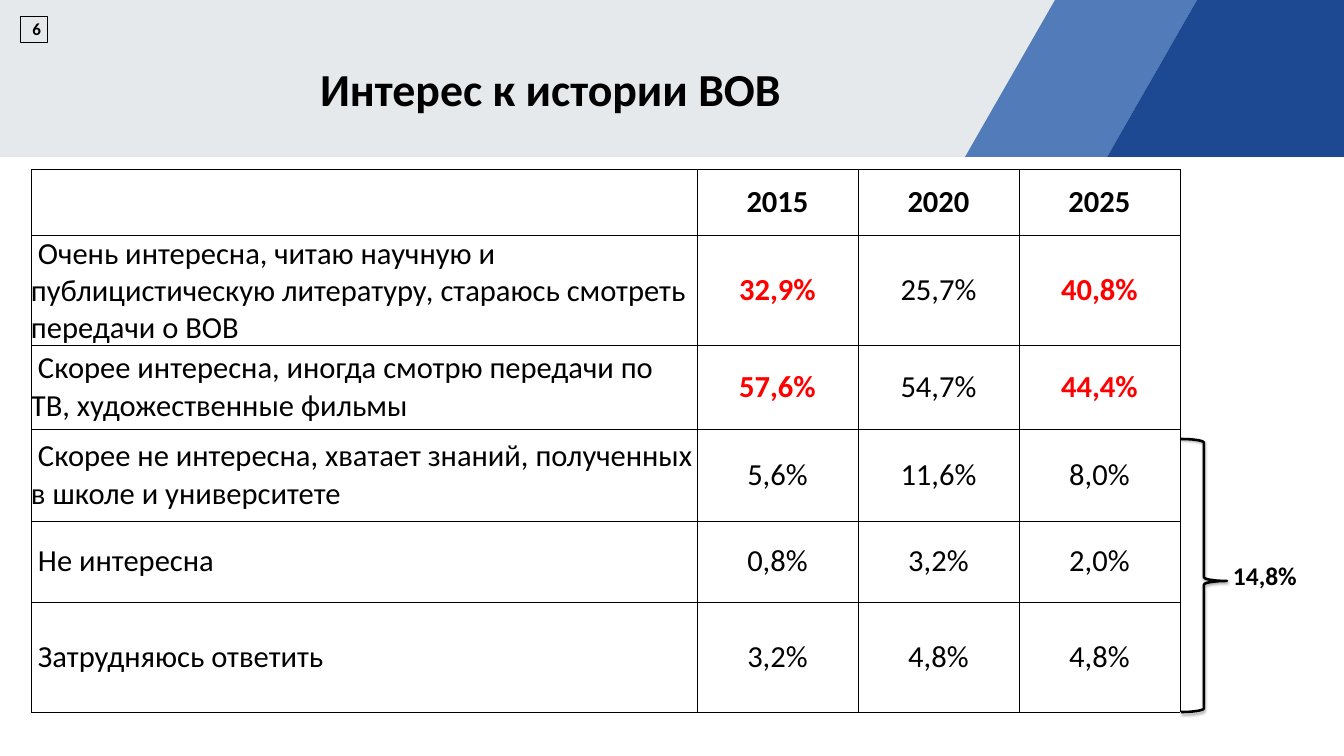
from dataclasses import dataclass

from lxml.etree import SubElement
from pptx import Presentation
from pptx.dml.color import RGBColor as Color
from pptx.enum.shapes import MSO_SHAPE as Shape
from pptx.enum.text import MSO_ANCHOR as Anchor, PP_ALIGN as Align
from pptx.oxml.ns import qn
from pptx.util import Pt

TITLE = "Интерес к истории ВОВ"
PAGE_NUMBER = "6"
BRACE_LABEL = "14,8%"
YEARS = ["2015", "2020", "2025"]
ANSWERS = [
    ("Очень интересна, читаю научную и публицистическую литературу, "
     "стараюсь смотреть передачи о ВОВ", "32,9%", "25,7%", "40,8%"),
    ("Скорее интересна, иногда смотрю передачи по ТВ, художественные фильмы",
     "57,6%", "54,7%", "44,4%"),
    ("Скорее не интересна, хватает знаний, полученных в школе и университете",
     "5,6%", "11,6%", "8,0%"),
    ("Не интересна", "0,8%", "3,2%", "2,0%"),
    ("Затрудняюсь ответить", "3,2%", "4,8%", "4,8%"),
]
HIGHLIGHTS = {"32,9%", "40,8%", "57,6%", "44,4%"}

PX = 14960  # EMU per pixel
WIDTH, HEIGHT = 1344, 756
BAND_HEIGHT, BAND_SLANT = 157, 90
TABLE_LEFT, TABLE_TOP = 31, 169
COLUMNS = [666] + [161] * len(YEARS)
ROWS = [66, 107, 84, 92, 81, 110]
TABLE_RIGHT = TABLE_LEFT + sum(COLUMNS)
TITLE_INDENT, ANSWER_INDENT = 36, 7


@dataclass(frozen=True)
class Theme:
    font: str = "Calibri"
    ink: str = "000000"
    accent: str = "FF0000"
    pale: str = "E6E9EB"
    mid: str = "517BB9"
    dark: str = "1D4992"
    title: int = 54
    body: int = 36
    label: int = 30
    number: int = 20


THEME = Theme()


def px(*lengths):
    return [length * PX for length in lengths]


def write(frame, text, size, bold=True, color=THEME.ink, align=Align.LEFT, indent=0):
    para = frame.paragraphs[0]
    para.text = text
    para.alignment = align
    if indent:
        para._p.get_or_add_pPr().set("indent", str(indent * PX))
    font = para.font
    font.name, font.size, font.bold = THEME.font, Pt(size), bold
    font.color.rgb = Color.from_string(color)


def add_label(page, bounds, text, size, wrap=True, **style):
    frame = page.shapes.add_textbox(*px(*bounds)).text_frame
    frame.word_wrap = wrap
    frame.vertical_anchor = Anchor.MIDDLE
    write(frame, text, size, **style)


def add_outline(page, kind, bounds, width):
    shape = page.shapes.add_shape(kind, *px(*bounds))
    shape.shadow.inherit = False
    shape.fill.background()
    shape.line.color.rgb = Color.from_string(THEME.ink)
    shape.line.width = Pt(width)
    return shape


def add_band(page, top_left, top_right, bottom_left, bottom_right, color):
    builder = page.shapes.build_freeform(top_left, 0, scale=PX)
    builder.add_line_segments([(top_right, 0), (bottom_right, BAND_HEIGHT),
                               (bottom_left, BAND_HEIGHT)])
    band = builder.convert_to_shape()
    band.shadow.inherit = False
    band.fill.solid()
    band.fill.fore_color.rgb = Color.from_string(color)
    band.line.fill.background()


def add_header(page):
    mid, dark = 1055, 1197
    add_band(page, 0, mid + 2, 0, mid + 2 - BAND_SLANT, THEME.pale)
    add_band(page, mid, dark, mid - BAND_SLANT, dark - BAND_SLANT, THEME.mid)
    add_band(page, dark, WIDTH, dark - BAND_SLANT, WIDTH, THEME.dark)
    add_label(page, (81, 52, 903, 72), TITLE, THEME.title,
              align=Align.CENTER, indent=TITLE_INDENT)
    number = add_outline(page, Shape.RECTANGLE, (20, 16, 27, 26), 0.75)
    number.text_frame.vertical_anchor = Anchor.MIDDLE
    write(number.text_frame, PAGE_NUMBER, THEME.number, align=Align.RIGHT)


def format_cell(cell):
    cell.margin_left = cell.margin_right = cell.margin_top = cell.margin_bottom = 0
    cell.vertical_anchor = Anchor.MIDDLE
    properties = cell._tc.get_or_add_tcPr()
    for side in ("lnL", "lnR", "lnT", "lnB"):
        line = SubElement(properties, qn(f"a:{side}"), w=str(Pt(0.5)))
        fill = SubElement(line, qn("a:solidFill"))
        SubElement(fill, qn("a:srgbClr"), val=THEME.ink)
    cell.fill.background()


def add_answers(page):
    table = page.shapes.add_table(
        len(ROWS), len(COLUMNS),
        *px(TABLE_LEFT, TABLE_TOP, sum(COLUMNS), sum(ROWS))).table
    table.first_row = table.horz_banding = False
    for column, width in zip(table.columns, px(*COLUMNS)):
        column.width = width
    for row, height in zip(table.rows, px(*ROWS)):
        row.height = height
    for r, texts in enumerate([("", *YEARS), *ANSWERS]):
        for c, text in enumerate(texts):
            cell = table.cell(r, c)
            format_cell(cell)
            marked = text in HIGHLIGHTS
            write(cell.text_frame, text, THEME.body, bold=r == 0 or marked,
                  color=THEME.accent if marked else THEME.ink,
                  align=Align.CENTER if c else Align.LEFT,
                  indent=0 if c else ANSWER_INDENT)


def add_brace(page):
    brace = add_outline(page, Shape.RIGHT_BRACE, (TABLE_RIGHT + 1, 439, 46, 273), 3)
    brace.adjustments[0], brace.adjustments[1] = 0.08, 0.52
    effects = brace._element.spPr.find(qn("a:effectLst"))
    shadow = SubElement(effects, qn("a:outerShdw"), blurRad=str(Pt(3.1)),
                        dist=str(Pt(1.8)), dir="5400000", rotWithShape="0")
    color = SubElement(shadow, qn("a:srgbClr"), val=THEME.ink)
    SubElement(color, qn("a:alpha"), val="35000")
    add_label(page, (1227, 557, 76, 37), BRACE_LABEL, THEME.label, wrap=False)


def main():
    deck = Presentation()
    deck.slide_width, deck.slide_height = px(WIDTH, HEIGHT)
    page = deck.slides.add_slide(deck.slide_layouts[6])
    add_header(page)
    add_answers(page)
    add_brace(page)
    deck.save("out.pptx")


if __name__ == "__main__":
    main()
